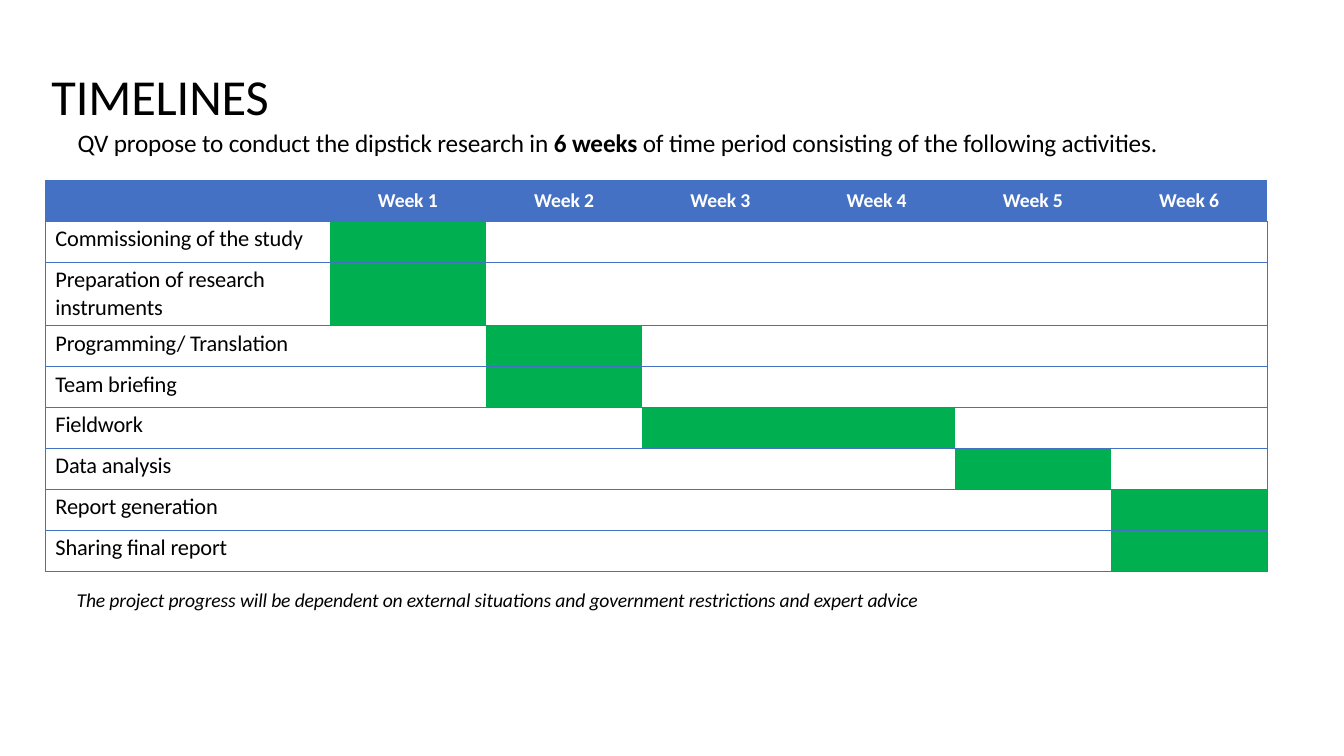
from lxml import etree
from pptx import Presentation
from pptx.dml.color import RGBColor
from pptx.enum.text import MSO_ANCHOR, MSO_AUTO_SIZE, PP_ALIGN
from pptx.oxml.ns import qn
from pptx.util import Inches, Pt

LEFT, CENTER = PP_ALIGN.LEFT, PP_ALIGN.CENTER
TOP = MSO_ANCHOR.TOP
COLORS = {"text": "000000", "header": "4471C4", "header_text": "FFFFFF", "bar": "00AF50"}
NO_STYLE = "{2D5ABB26-0587-4C30-8999-92F81FD0307C}"
WEEKS = 6
# Activity lines, first week, last week
ACTIVITIES = [
    (["Commissioning of the study"], 1, 1),
    (["Preparation of research", "instruments"], 1, 1),
    (["Programming/ Translation"], 2, 2),
    (["Team briefing"], 2, 2),
    (["Fieldwork"], 3, 4),
    (["Data analysis"], 5, 5),
    (["Report generation"], 6, 6),
    (["Sharing final report"], 6, 6),
]


def write(paragraph, runs, size, color="text", align=LEFT, indent=0):
    """Fill a paragraph with runs, slightly tightened."""
    paragraph.alignment = align
    properties = paragraph._p.get_or_add_pPr()
    properties.set("marL", str(Inches(indent)))
    properties.set("indent", "0")
    for text in runs:
        run = paragraph.add_run()
        run.text = text
        run._r.get_or_add_rPr().set("spc", "-10")
    paragraph.font.name = "Calibri"
    paragraph.font.size = Pt(size)
    paragraph.font.color.rgb = RGBColor.from_string(COLORS[color])


def style_cell(cell, sides, fill, top_margin):
    """Draw the given borders, then set the fill and margins."""
    properties = cell._tc.get_or_add_tcPr()
    for side in "LRTB":
        if side in sides:
            line = etree.SubElement(properties, qn("a:ln" + side), w=str(Pt(0.5)))
            solid = etree.SubElement(line, qn("a:solidFill"))
            etree.SubElement(solid, qn("a:srgbClr"), val=COLORS["header"])
    if fill:
        cell.fill.solid()
        cell.fill.fore_color.rgb = RGBColor.from_string(COLORS[fill])
    else:
        cell.fill.background()
    cell.margin_left = cell.margin_right = cell.margin_bottom = 0
    cell.margin_top = Inches(top_margin)


prs = Presentation()
prs.slide_width, prs.slide_height = Inches(13.33), Inches(7.5)
slide = prs.slides.add_slide(prs.slide_layouts[5])

# Title and introduction
title = slide.shapes.title
title.left, title.top = Inches(0.5), Inches(0.51)
title.width, title.height = Inches(11.21), Inches(1.06)
frame = title.text_frame
frame.auto_size = MSO_AUTO_SIZE.NONE
frame.word_wrap = True
frame.vertical_anchor = TOP
frame.margin_left = frame.margin_right = frame.margin_bottom = 0
frame.margin_top = Inches(0.2)
heading = frame.paragraphs[0]
write(heading, ["TIMELINES"], 36, indent=0.01)
intro = frame.add_paragraph()
write(intro, ["QV propose to conduct the dipstick research in ", "6 weeks",
              " of time period consisting of the following activities."], 18, indent=0.27)
intro.runs[1].font.bold = True
intro.space_before = Pt(3.2)
heading.line_spacing = intro.line_spacing = 0.9

# Footnote
note = slide.shapes.add_textbox(Inches(0.75), Inches(5.82), Inches(8.45), Inches(0.26))
frame = note.text_frame
frame.word_wrap = True
frame.margin_left = frame.margin_right = frame.margin_bottom = 0
frame.margin_top = Inches(0.01)
footnote = frame.paragraphs[0]
write(footnote, ["The project progress will be dependent on external situations "
                 "and government restrictions and expert advice"], 14, indent=0.01)
footnote.font.italic = True

# Timeline table
table_frame = slide.shapes.add_table(len(ACTIVITIES) + 1, WEEKS + 1, Inches(0.45),
                                     Inches(1.79), Inches(12.13), Inches(3.88))
timeline = table_frame.table
timeline._tbl.tblPr.find(qn("a:tableStyleId")).text = NO_STYLE
timeline.horz_banding = False
for number, column in enumerate(timeline.columns):
    column.width = Inches(1.55 if number else 2.82)
tall_row = 0.63
for row in timeline.rows:
    row.height = Inches((3.88 - tall_row) / len(ACTIVITIES))
timeline.rows[2].height = Inches(tall_row)

# Header row
for week in range(WEEKS + 1):
    cell = timeline.cell(0, week)
    style_cell(cell, "", "header", 0.08)
    if week:
        paragraph = cell.text_frame.paragraphs[0]
        write(paragraph, [f"Week {week}"], 14, "header_text", CENTER)
        paragraph.font.bold = True

# Activity rows: label, bar, remaining weeks
for number, (label, first, last) in enumerate(ACTIVITIES, start=1):
    parts = [(0, first - 1, None), (first, last, "bar"), (last + 1, WEEKS, None)]
    for start, end, fill in parts:
        if start > end:
            continue
        sides = "TB" + ("L" if start == 0 else "") + ("R" if end == WEEKS else "")
        for column in range(start, end + 1):
            style_cell(timeline.cell(number, column), sides, fill, 0.04)
        if end > start:
            timeline.cell(number, start).merge(timeline.cell(number, end))
    frame = timeline.cell(number, 0).text_frame
    for position, text in enumerate(label):
        paragraph = frame.add_paragraph() if position else frame.paragraphs[0]
        write(paragraph, [text], 16, indent=0.1)

prs.save("out.pptx")
